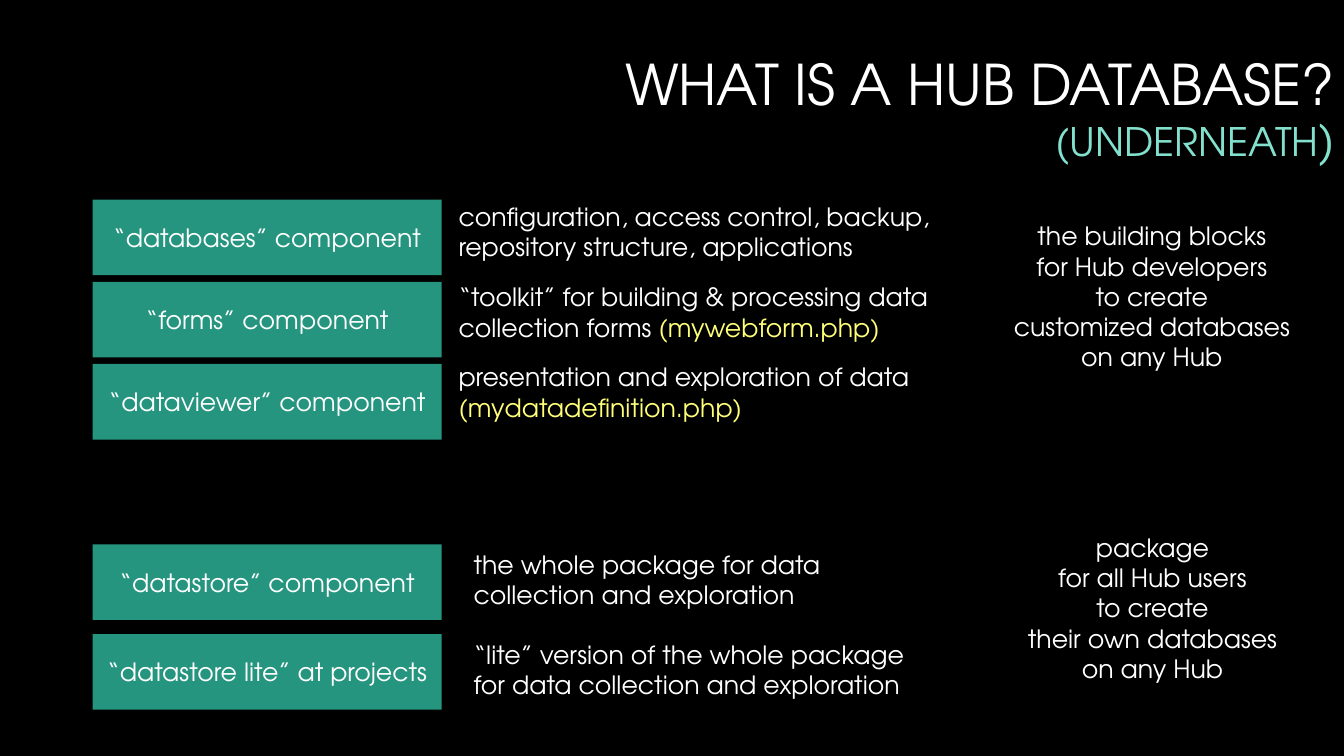
from pptx import Presentation, util as u
from pptx.dml.color import RGBColor
from pptx.enum import shapes, text

BLACK = RGBColor(0x00, 0x00, 0x00)
WHITE = RGBColor(0xFF, 0xFF, 0xFF)
GREEN = RGBColor(0x26, 0x95, 0x7F)
MINT = RGBColor(0x82, 0xE0, 0xCD)
YELLOW = RGBColor(0xFF, 0xFF, 0x79)
FONT = "TeX Gyre Adventor"

# The slide is a grid of 100 columns by 100 rows
WIDE, HIGH = u.Inches(13.33), u.Inches(7.5)
LEFT, CARD_W, CARD_H = 6.9, 25.96, 10
NOTE_H, SIDE_H = 9.47, 21.6

# Each group: card top, card step, note left, note top, note step, rows
# Each row: card label, note width, note lines made of (words, colour) runs
GROUPS = [
    (26.4, 10.87, 33.38, 26, 10.6, [
        ("“databases” component", 37.6,
         [[("configuration, access control, backup,", WHITE)],
          [("repository structure, applications", WHITE)]]),
        ("“forms” component", 37.4,
         [[("“toolkit” for building & processing data collection forms ", WHITE),
           ("(mywebform.php)", YELLOW)]]),
        ("“dataviewer” component", 35.7,
         [[("presentation and exploration of data ", WHITE),
           ("(mydatadefinition.php)", YELLOW)]]),
    ]),
    (72, 11.87, 34.5, 72, 11.87, [
        ("“datastore” component", 32.5,
         [[("the whole package for data collection and exploration", WHITE)]]),
        ("“datastore lite” at projects", 34.7,
         [[("“lite” version of the whole package for data collection "
            "and exploration", WHITE)]]),
    ]),
]

# Each side text: left, top, width, lines
SIDES = [
    (74.34, 28.53, 22.73, ["the building blocks", "for Hub developers", "to create",
                           "customized databases", "on any Hub"]),
    (74.8, 69.73, 21.9, ["package", "for all Hub users", "to create",
                         "their own databases", "on any Hub"]),
]


def place(left, top, width, height):
    """Turn columns and rows into slide lengths."""
    return [round(n * full / 100) for n, full in
            ((left, WIDE), (top, HIGH), (width, WIDE), (height, HIGH))]


def write(shape, lines, align=text.PP_ALIGN.LEFT, anchor=text.MSO_ANCHOR.TOP,
          size=18, space=None):
    """Fill a shape; a run is (words, colour) or (words, colour, size)."""
    frame = shape.text_frame
    frame.word_wrap = True
    frame.vertical_anchor = anchor
    for i, line in enumerate(lines):
        para = frame.add_paragraph() if i else frame.paragraphs[0]
        para.alignment = align
        if space:
            para.line_spacing = space
        for words, colour, *own in line:
            if words == "\n":
                para.add_line_break()
                continue
            run = para.add_run()
            run.text = words
            run.font.name = FONT
            run.font.size = u.Pt(own[0] if own else size)
            run.font.color.rgb = colour


def label(slide, area, lines, **style):
    write(slide.shapes.add_textbox(*place(*area)), lines, **style)


def card(slide, area, words):
    box = slide.shapes.add_shape(shapes.MSO_SHAPE.RECTANGLE, *place(*area))
    box.shadow.inherit = False
    box.fill.solid()
    box.fill.fore_color.rgb = GREEN
    box.line.fill.background()
    write(box, [[(words, WHITE)]], align=text.PP_ALIGN.CENTER,
          anchor=text.MSO_ANCHOR.MIDDLE)


def main():
    deck = Presentation()
    deck.slide_width, deck.slide_height = WIDE, HIGH
    slide = deck.slides.add_slide(deck.slide_layouts[6])
    slide.background.fill.solid()
    slide.background.fill.fore_color.rgb = BLACK

    # Title
    label(slide, (29.4, 5.33, 70.67, 18.8),
          [[("WHAT IS A HUB DATABASE?", WHITE, 40), ("\n", WHITE),
            ("(UNDERNEATH", MINT, 28), (")", MINT, 32)]],
          align=text.PP_ALIGN.RIGHT, anchor=text.MSO_ANCHOR.MIDDLE, space=0.9)

    # Components and what each one does
    for top, step, note_x, note_y, note_step, rows in GROUPS:
        for i, (name, width, lines) in enumerate(rows):
            card(slide, (LEFT, top + i * step, CARD_W, CARD_H), name)
            label(slide, (note_x, note_y + i * note_step, width, NOTE_H), lines)

    # Who each group is for
    for left, top, width, lines in SIDES:
        label(slide, (left, top, width, SIDE_H), [[(line, WHITE)] for line in lines],
              align=text.PP_ALIGN.CENTER)

    deck.save("out.pptx")


if __name__ == "__main__":
    main()
